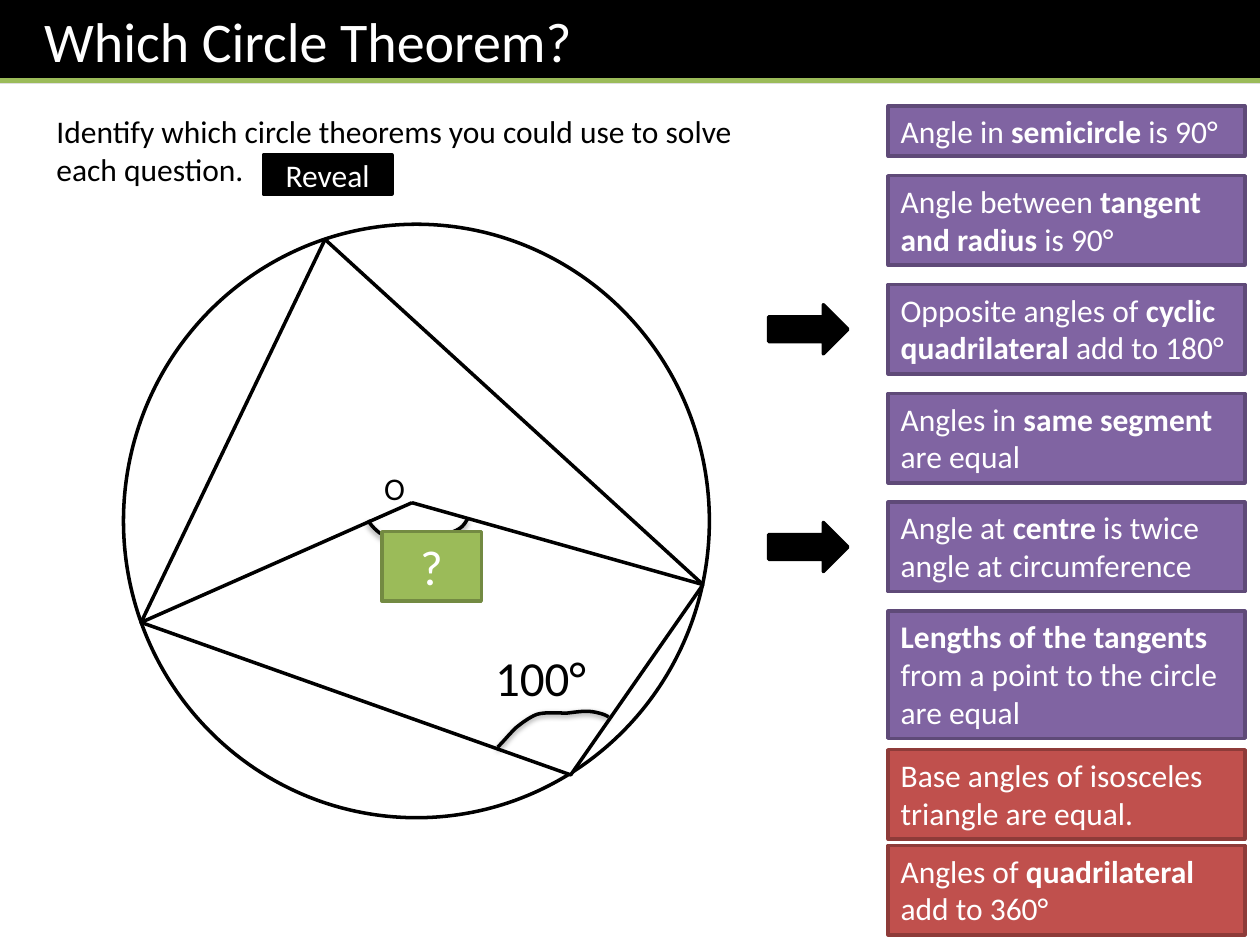
from collections import namedtuple
from dataclasses import dataclass

from lxml import etree
from pptx import Presentation
from pptx.dml.color import RGBColor
from pptx.enum import shapes, text
from pptx.oxml import ns
from pptx.util import Pt

SCALE = 9144
Box = namedtuple("Box", "left top width height")


@dataclass(frozen=True)
class Theme:
    """Colours, font and type sizes of the slide."""
    font: str = "Calibri"
    black: str = "000000"
    white: str = "FFFFFF"
    green: str = "9BBB59"
    green_edge: str = "738A42"
    purple: str = "8064A2"
    purple_edge: str = "5F4A78"
    red: str = "C0504D"
    red_edge: str = "8E3B39"
    title: int = 32
    label: int = 28
    body: int = 18
    stroke: int = 2
    rule: int = 3


THEME = Theme()
CIRCLE_RULES = [
    ("Angle in *semicircle* is 90°", 40, False),
    ("Angle between *tangent and radius* is 90°", 71, False),
    ("Opposite angles of *cyclic quadrilateral* add to 180°", 71, True),
    ("Angles in *same segment *are equal", 71, False),
    ("Angle at *centre* is twice angle at circumference", 71, True),
    ("*Lengths of the tangents *from a point to the circle are equal", 101, False),
]
BASIC_RULES = [
    ("Base angles of isosceles triangle are equal.", 71, False),
    ("Angles of *quadrilateral* add to 360°", 71, False),
]
RIM = [(14, 316), (355, 437), (460, 286), (160, 12)]
CENTRE = (229, 221)
RIM_ARC = [(297, 415), (302, 410), (306, 405), (311, 400), (316, 396),
           (321, 392), (328, 389), (335, 387), (344, 388), (352, 388),
           (360, 387), (367, 386), (373, 387), (378, 388), (382, 389), (385, 391)]
CENTRE_ARC = [(194, 235), (198, 241), (203, 246), (211, 249), (219, 251),
              (232, 251), (241, 250), (250, 249), (259, 245), (264, 243),
              (270, 240), (271, 237), (273, 234)]


def emu(*lengths):
    """Turn px lengths into EMU."""
    return [round(length * SCALE) for length in lengths]


def inside(box, left, top, width, height):
    """Return a box placed relative to another box."""
    return Box(box.left + left, box.top + top, width, height)


def write(shape, words, size=THEME.body, color=THEME.white, align="LEFT",
          anchor="TOP", inset=10):
    """Fill a shape with one paragraph; asterisks switch bold on and off."""
    frame = shape.text_frame
    frame.word_wrap = True
    frame.auto_size = text.MSO_AUTO_SIZE.NONE
    frame.vertical_anchor = text.MSO_ANCHOR[anchor]
    frame.margin_left, frame.margin_right = emu(inset, 10)
    frame.margin_top, frame.margin_bottom = emu(5, 5)
    para = frame.paragraphs[0]
    para.alignment = text.PP_ALIGN[align]
    for index, part in enumerate(words.split("*")):
        if part:
            span = para.add_run()
            span.text = part
            span.font.name = THEME.font
            span.font.size = Pt(size)
            span.font.bold = index % 2 == 1
            span.font.color.rgb = RGBColor.from_string(color)


def paint(shape, fill=None, edge=THEME.black):
    """Set a shape's fill and line and take its shadow away."""
    shape.shadow.inherit = False
    if fill:
        shape.fill.solid()
        shape.fill.fore_color.rgb = RGBColor.from_string(fill)
    else:
        shape.fill.background()
    shape.line.color.rgb = RGBColor.from_string(edge)
    shape.line.width = Pt(THEME.stroke)


def add_preset(page, kind, box, fill, edge=THEME.black):
    """Add a painted preset shape."""
    shape = page.shapes.add_shape(shapes.MSO_SHAPE[kind], *emu(*box))
    paint(shape, fill, edge)
    return shape


def add_label(page, box, words, **style):
    """Add a text box."""
    write(page.shapes.add_textbox(*emu(*box)), words, **style)


def add_line(page, start, end, color=THEME.black, width=THEME.stroke):
    """Add a straight line without a shadow."""
    line = page.shapes.add_connector(
        shapes.MSO_CONNECTOR.STRAIGHT, *emu(*start, *end))
    line.line.color.rgb = RGBColor.from_string(color)
    line.line.width = Pt(width)
    etree.SubElement(line._element.spPr, ns.qn("a:effectLst"))


def add_outline(page, box, points, closed=False, fill=None):
    """Add a freeform through points relative to the box."""
    spots = [emu(box.left + x, box.top + y) for x, y in points]
    builder = page.shapes.build_freeform(*spots[0], scale=1.0)
    builder.add_line_segments(spots[1:], close=closed)
    shape = builder.convert_to_shape()
    paint(shape, fill)
    return shape


def curve(controls, steps=8):
    """Sample a chain of cubic Bézier pieces."""
    points = [controls[0]]
    for first in range(0, len(controls) - 1, 3):
        piece = controls[first:first + 4]
        for step in range(1, steps + 1):
            t = step / steps
            weights = ((1 - t) ** 3, 3 * t * (1 - t) ** 2, 3 * t * t * (1 - t), t ** 3)
            points.append(tuple(
                sum(w * spot[axis] for w, spot in zip(weights, piece))
                for axis in (0, 1)))
    return points


def add_angle_arc(page, box, controls):
    """Add an angle mark with a soft shadow below it."""
    shape = add_outline(page, box, curve(controls))
    effects = shape._element.spPr.find(ns.qn("a:effectLst"))
    shadow = etree.SubElement(effects, ns.qn("a:outerShdw"), blurRad=str(Pt(3.1)),
                              dist=str(Pt(1.6)), dir="5400000", rotWithShape="0")
    color = etree.SubElement(shadow, ns.qn("a:srgbClr"), val=THEME.black)
    etree.SubElement(color, ns.qn("a:alpha"), val="38000")


def draw_header(page, box):
    """Set the title on its black band with a green rule."""
    title = page.shapes.title
    title.left, title.top, title.width, title.height = emu(*box)
    title.fill.solid()
    title.fill.fore_color.rgb = RGBColor.from_string(THEME.black)
    write(title, "Which Circle Theorem?", size=THEME.title, inset=35)
    level = box.top + box.height - 2
    add_line(page, (box.left, level), (box.left + box.width, level),
             THEME.green, THEME.rule)


def draw_task(page, box):
    """Place the instruction and its reveal button."""
    add_label(page, box, "Identify which circle theorems you could use to solve "
              "each question.", color=THEME.black)
    button = add_preset(page, "RECTANGLE", inside(box, 174, 39, 102, 31), THEME.black)
    write(button, "Reveal", align="CENTER", anchor="MIDDLE")


def draw_diagram(page, box):
    """Draw the circle, its chords and radii, and the angle marks."""
    add_preset(page, "OVAL", box, THEME.white)
    add_outline(page, box, RIM, closed=True, fill=THEME.white)
    centre = (box.left + CENTRE[0], box.top + CENTRE[1])
    for x, y in (RIM[0], RIM[2]):
        add_line(page, (box.left + x, box.top + y), centre)
    add_label(page, inside(box, 197, 189, 47, 40), "O", color=THEME.black)
    for controls in (RIM_ARC, CENTRE_ARC):
        add_angle_arc(page, box, controls)
    add_label(page, inside(box, 276, 331, 110, 57), "100°", size=THEME.label,
              color=THEME.black, align="CENTER")
    cover = add_preset(page, "RECTANGLE", inside(box, 205, 244, 79, 55),
                       THEME.green, THEME.green_edge)
    write(cover, "?", size=THEME.label, align="CENTER", anchor="MIDDLE")


def draw_rules(page, box, rules, fill, edge):
    """Stack rule cards with equal gaps and point arrows at the ones in use."""
    gap = (box.height - sum(height for _, height, _ in rules)) / (len(rules) - 1)
    top = 0
    for words, height, used in rules:
        card = add_preset(page, "RECTANGLE", inside(box, 0, top, box.width, height),
                          fill, edge)
        write(card, words)
        if used:
            add_preset(page, "RIGHT_ARROW",
                       inside(box, -95, top + (height - 39) / 2, 63, 39), THEME.black)
        top += height + gap


def main():
    """Build and save the slide."""
    deck = Presentation()
    deck.slide_width, deck.slide_height = emu(1000, 750)
    page = deck.slides.add_slide(deck.slide_layouts.get_by_name("Title Only"))
    draw_header(page, Box(0, 0, 1000, 66))
    draw_task(page, Box(35, 84, 606, 71))
    draw_diagram(page, Box(98, 178, 465, 471))
    draw_rules(page, Box(705, 84, 283, 502), CIRCLE_RULES,
               THEME.purple, THEME.purple_edge)
    draw_rules(page, Box(705, 595, 283, 147), BASIC_RULES, THEME.red, THEME.red_edge)
    deck.save("out.pptx")


if __name__ == "__main__":
    main()
